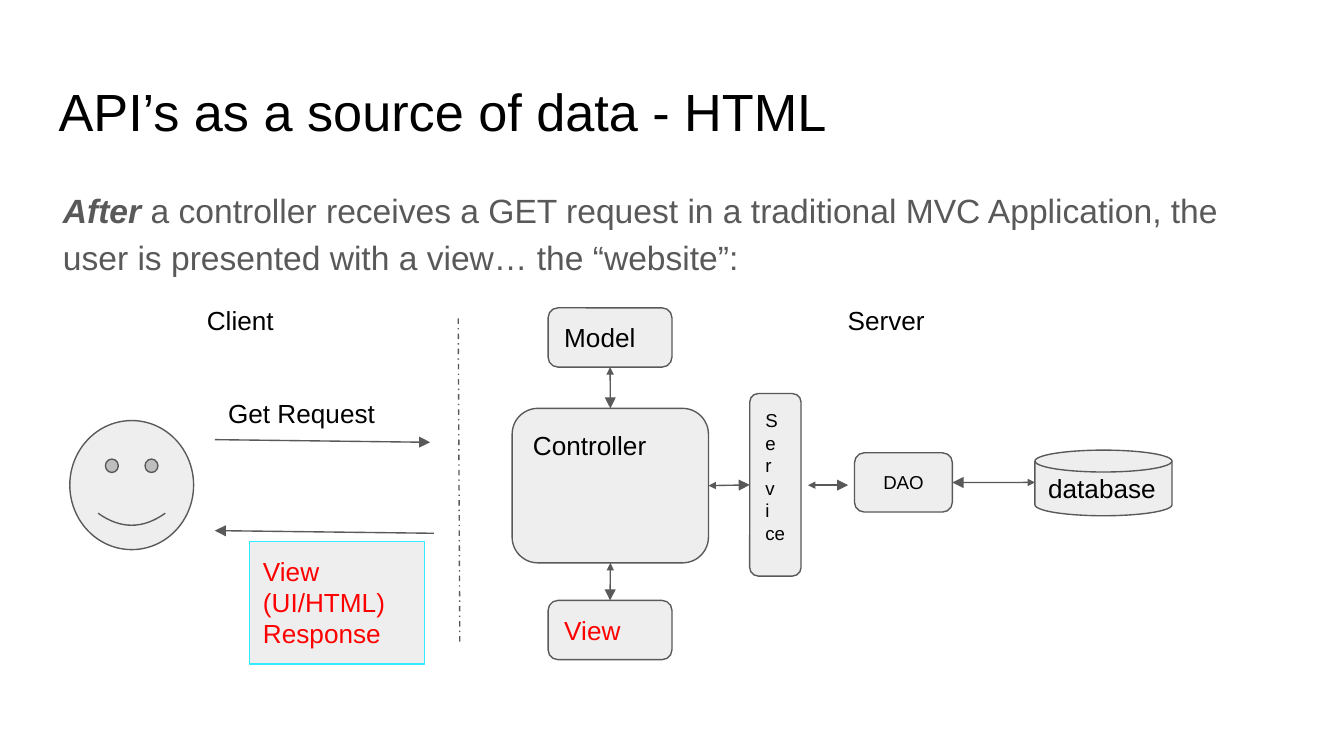
from lxml import etree
from pptx import Presentation
from pptx.dml.color import RGBColor
from pptx.enum.dml import MSO_LINE
from pptx.enum.shapes import MSO_CONNECTOR, MSO_SHAPE as Shape
from pptx.enum.text import MSO_ANCHOR as Anchor, MSO_AUTO_SIZE, PP_ALIGN as Align
from pptx.oxml.ns import qn
from pptx.util import Cm, Pt

BLACK, RED, GREY, LIGHT, CYAN = "000000", "FF0000", "595959", "EEEEEE", "31EBFF"
TOP, LEFT, BOTTOM, RIGHT = range(4)


def rgb(color):
    return RGBColor.from_string(color)


def write(shape, text, size=14, color=BLACK, anchor=Anchor.TOP, align=Align.LEFT, emphasis=""):
    """Fill a shape with one paragraph: an optional bold italic lead, then the text."""
    frame = shape.text_frame
    frame.word_wrap = True
    frame.vertical_anchor = anchor
    frame.margin_left = frame.margin_right = Cm(0.25)
    frame.margin_top = frame.margin_bottom = Cm(0.25)
    paragraph = frame.paragraphs[0]
    paragraph.alignment = align
    for part, strong in ((emphasis, True), (text, False)):
        for index, line in enumerate(part.split("\n")):
            if index:
                paragraph.add_line_break()
            if line:
                run = paragraph.add_run()
                run.text = line
                run.font.name = "Arial"
                run.font.size = Pt(size)
                run.font.color.rgb = rgb(color)
                run.font.bold = run.font.italic = strong
    return paragraph


presentation = Presentation()
presentation.slide_width, presentation.slide_height = Cm(25.4), Cm(14.29)
slide = presentation.slides.add_slide(presentation.slide_layouts[6])

# Title and introduction
title = slide.shapes.add_textbox(Cm(0.86), Cm(1.24), Cm(23.67), Cm(1.6))
write(title, "API’s as a source of data - HTML", 28)
introduction = slide.shapes.add_textbox(Cm(0.94), Cm(3.23), Cm(23.67), Cm(1.22))
paragraph = write(
    introduction,
    "a controller receives a GET request in a traditional MVC Application, "
    "the user is presented with a view… the “website”:",
    18, GREY, emphasis="After ")
paragraph.line_spacing = 1.15

# Labels
for text, left, top, width in (
    ("Client", 3.66, 5.51, 1.85),
    ("Server", 15.77, 5.51, 2.21),
    ("Get Request", 4.06, 7.26, 3.3),
):
    label = slide.shapes.add_textbox(Cm(left), Cm(top), Cm(width), Cm(1.12))
    write(label, text)
    label.text_frame.auto_size = MSO_AUTO_SIZE.SHAPE_TO_FIT_TEXT

# Client and server parts
parts = {}
for name, kind, left, top, width, height, line_color in (
    ("user", Shape.SMILEY_FACE, 1.32, 7.95, 2.34, 2.44, GREY),
    ("response", Shape.RECTANGLE, 4.72, 10.24, 3.3, 2.31, CYAN),
    ("model", Shape.ROUNDED_RECTANGLE, 10.36, 5.82, 2.34, 1.12, GREY),
    ("controller", Shape.ROUNDED_RECTANGLE, 9.68, 7.72, 3.71, 2.92, GREY),
    ("view", Shape.ROUNDED_RECTANGLE, 10.36, 11.35, 2.34, 1.12, GREY),
    ("service", Shape.ROUNDED_RECTANGLE, 14.17, 7.44, 0.97, 3.45, GREY),
    ("dao", Shape.ROUNDED_RECTANGLE, 16.15, 8.56, 1.85, 1.12, GREY),
    ("database", Shape.FLOWCHART_MAGNETIC_DISK, 19.56, 8.51, 2.59, 1.24, GREY),
):
    shape = slide.shapes.add_shape(kind, Cm(left), Cm(top), Cm(width), Cm(height))
    shape.shadow.inherit = False
    shape.fill.solid()
    shape.fill.fore_color.rgb = rgb(LIGHT)
    shape.line.color.rgb = rgb(line_color)
    shape.line.width = Pt(0.75)
    parts[name] = shape

write(parts["response"], "View (UI/HTML) Response", color=RED)
write(parts["model"], "Model", anchor=Anchor.MIDDLE)
write(parts["controller"], "Controller")
write(parts["view"], "View", color=RED, anchor=Anchor.MIDDLE)
write(parts["service"], "Se\nr v\ni ce", 10)
write(parts["dao"], "DAO", 10, anchor=Anchor.MIDDLE, align=Align.CENTER)
write(parts["database"], "database", anchor=Anchor.MIDDLE)

# Lines: ends, joined sides, arrowhead sizes at start and end
for ends, start, end, head, tail in (
    ((4.06, 8.31, 8.13, 8.36), None, None, None, "med"),
    ((8.2, 10.08, 4.06, 10.03), None, None, None, "med"),
    ((8.66, 6.02, 8.69, 12.19), None, None, None, None),
    ((11.53, 6.94, 11.53, 7.72), ("model", BOTTOM), ("controller", TOP), "sm", "med"),
    ((11.53, 10.64, 11.53, 11.35), ("controller", BOTTOM), ("view", TOP), "sm", "med"),
    ((13.39, 9.17, 14.17, 9.17), ("controller", RIGHT), ("service", LEFT), "sm", "med"),
    ((15.27, 9.17, 16.03, 9.17), None, None, "sm", "med"),
    ((19.56, 9.12, 18, 9.12), None, ("dao", RIGHT), "sm", "med"),
):
    connector = slide.shapes.add_connector(MSO_CONNECTOR.STRAIGHT, *map(Cm, ends))
    if start:
        connector.begin_connect(parts[start[0]], start[1])
    if end:
        connector.end_connect(parts[end[0]], end[1])
    connector.line.color.rgb = rgb(GREY)
    connector.line.width = Pt(0.75)
    if not tail:
        connector.line.dash_style = MSO_LINE.DASH_DOT
    outline = connector.line._get_or_add_ln()
    for tag, size in (("a:headEnd", head), ("a:tailEnd", tail)):
        if size:
            etree.SubElement(outline, qn(tag), type="triangle", w=size, len=size)
    etree.SubElement(connector._element.spPr, qn("a:effectLst"))

presentation.save("out.pptx")
